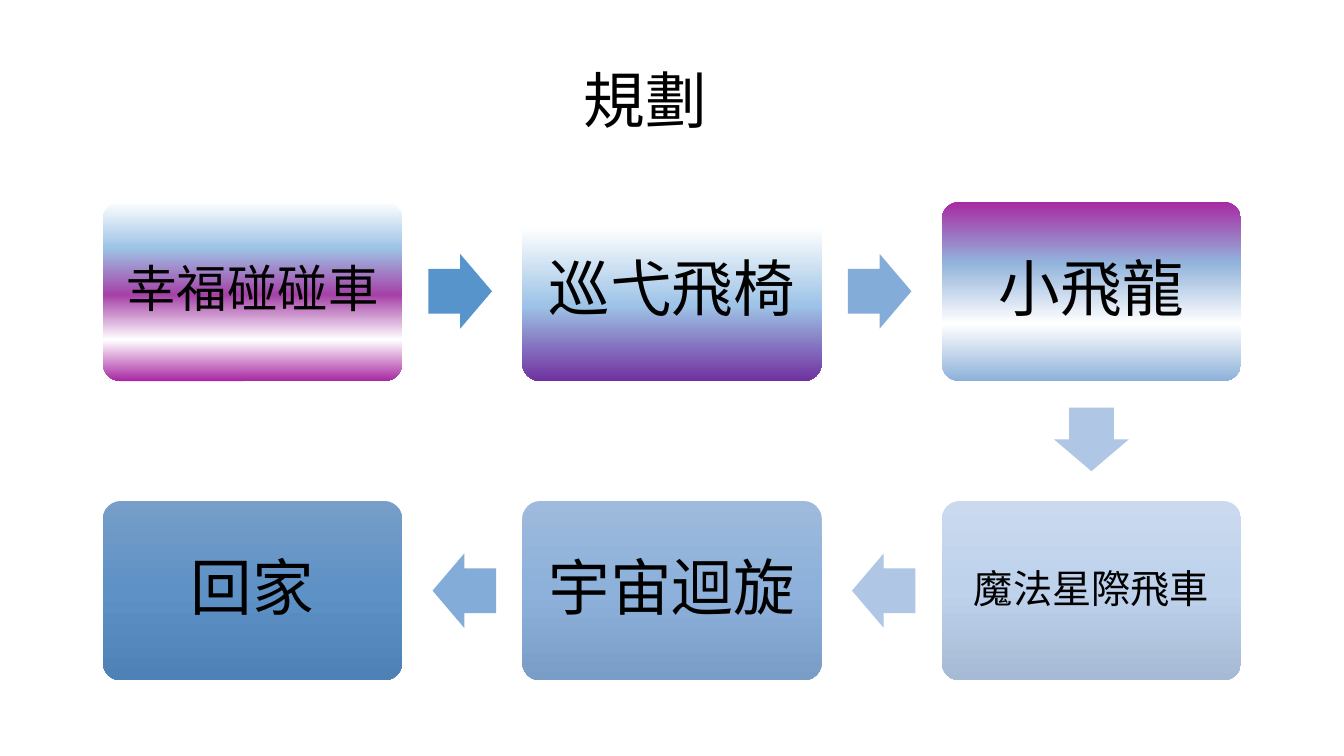
"""Build a slide with a six-step ride plan that snakes over two rows."""
import pptx
import pptx.util
import pptx.dml.color
import pptx.enum.shapes
import pptx.enum.text
import pptx.oxml.ns
import lxml.etree

Inches = pptx.util.Inches
SHAPE = pptx.enum.shapes.MSO_SHAPE

TITLE = "規劃"
STEPS = [
    ("幸福碰碰車", "mid", 0.15, [(0, "FFFFFF"), (26, "9DC3E6"), (52, "A541A7"), (77, "FFFFFF"), (100, "A828A2")]),
    ("巡弋飛椅", "big", 0.18, [(14, "FFFFFF"), (58, "9DC3E6"), (100, "7030A0")]),
    ("小飛龍", "big", 0.18, [(0, "A828A2"), (34, "92B3DB"), (68, "FFFFFF"), (100, "8DB1DA")]),
    ("魔法星際飛車", "small", 0.12, [(0, "CAD9EE"), (50, "BED2EC"), (100, "A6BAD5")]),
    ("宇宙迴旋", "big", 0.18, [(0, "9EBADC"), (50, "8DB1DA"), (100, "799DC6")]),
    ("回家", "big", 0.18, [(0, "779EC8"), (50, "5E91C6"), (100, "4E81B5")]),
]
ARROWS = ["5794CB", "83ACD8", "AFC7E5", "AFC7E5", "83ACD8"]
THEME = {"font": "Calibri", "ink": "000000", "big": 44, "mid": 36, "small": 28}

COLS = 3
LEFT, TOP = 1.02, 2
WIDE, HIGH = 2.97, 1.78
STEP_X, STEP_Y = 4.16, 2.97
ARROW_W, ARROW_H = 0.63, 0.74
TURNS = {
    0: (3.23, 0.52),
    90: ((WIDE - ARROW_W) / 2, 1.99),
    180: (-0.89, 0.52),
}


def paint(shape, color):
    shape.fill.solid()
    shape.fill.fore_color.rgb = pptx.dml.color.RGBColor.from_string(color)


def blend(shape, stops):
    qn = pptx.oxml.ns.qn
    shape.fill.gradient()
    shape.fill.gradient_angle = 270
    ramp = shape._element.spPr.find(".//" + qn("a:gsLst"))
    for old in list(ramp):
        ramp.remove(old)
    for place, color in stops:
        stop = lxml.etree.SubElement(ramp, qn("a:gs"), pos=str(place * 1000))
        lxml.etree.SubElement(stop, qn("a:srgbClr"), val=color)


def write(shape, text, size, inset):
    frame = shape.text_frame
    pad = Inches(inset)
    form = {
        "word_wrap": True,
        "vertical_anchor": pptx.enum.text.MSO_ANCHOR.MIDDLE,
        "margin_left": pad, "margin_right": pad,
        "margin_top": pad, "margin_bottom": pad,
    }
    for name, value in form.items():
        setattr(frame, name, value)
    para = frame.paragraphs[0]
    para.text = text
    para.alignment = pptx.enum.text.PP_ALIGN.CENTER
    para.line_spacing = 0.9
    font = para.runs[0].font
    for name, value in {"name": THEME["font"], "size": pptx.util.Pt(THEME[size])}.items():
        setattr(font, name, value)
    font.color.rgb = pptx.dml.color.RGBColor.from_string(THEME["ink"])


def draw(slide, kind, box, bends):
    shape = slide.shapes.add_shape(kind, *map(Inches, box))
    shape.shadow.inherit = False
    shape.line.fill.background()
    for spot, bend in enumerate(bends):
        shape.adjustments[spot] = bend
    return shape


def place(index):
    row, col = divmod(index, COLS)
    if row % 2:
        col = COLS - 1 - col
    return LEFT + col * STEP_X, TOP + row * STEP_Y


def main():
    deck = pptx.Presentation()
    deck.slide_width, deck.slide_height = Inches(13.33), Inches(7.5)
    slide = deck.slides.add_slide(deck.slide_layouts[6])
    head = slide.shapes.add_textbox(*map(Inches, (0.65, 0.3, 11.5, 1.45)))
    write(head, TITLE, "big", 0.05)

    for index, (text, size, inset, stops) in enumerate(STEPS):
        x, y = place(index)
        card = draw(slide, SHAPE.ROUNDED_RECTANGLE, (x, y, WIDE, HIGH), [0.1])
        blend(card, stops)
        write(card, text, size, inset)

    for index, color in enumerate(ARROWS):
        x, y = place(index)
        next_x, next_y = place(index + 1)
        turn = 90 if next_y > y else 0 if next_x > x else 180
        dx, dy = TURNS[turn]
        arrow = draw(slide, SHAPE.RIGHT_ARROW, (x + dx, y + dy, ARROW_W, ARROW_H), [0.6, 0.5])
        arrow.rotation = turn
        paint(arrow, color)

    deck.save("out.pptx")


if __name__ == "__main__":
    main()
